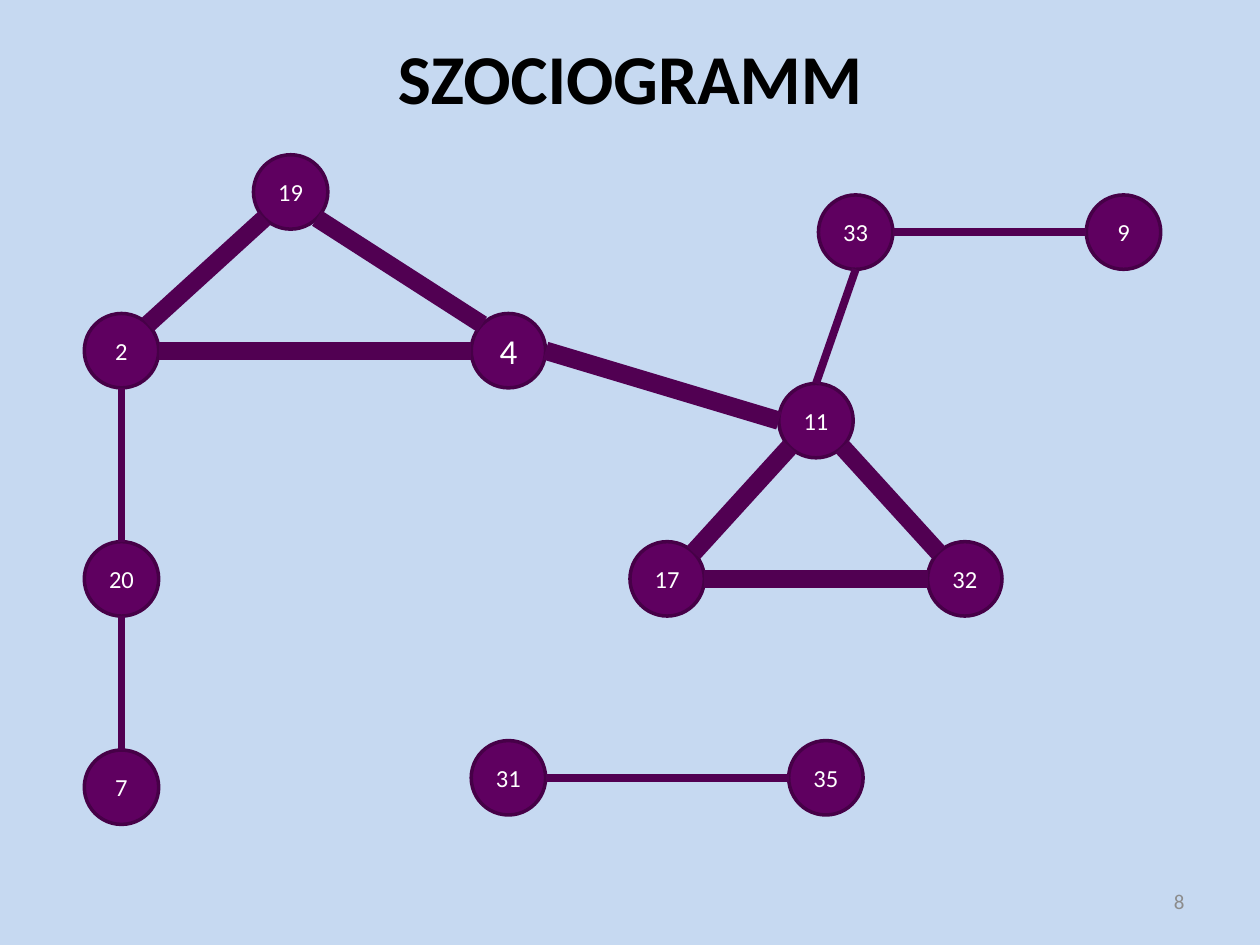
from collections import namedtuple
from math import sqrt

from lxml.etree import SubElement
from pptx import Presentation
from pptx.dml.color import RGBColor
from pptx.enum.shapes import MSO_CONNECTOR as Line, MSO_SHAPE as Shape
from pptx.enum.text import MSO_ANCHOR as Anchor, PP_ALIGN as Align
from pptx.oxml.ns import qn
from pptx.util import Cm, Pt

Box = namedtuple("Box", "left top width height")

COLORS = {
    "background": "C6D9F1",
    "title": "000000",
    "number": "8C8C8C",
    "node": "5F0060",
    "outline": "460047",
    "tie": "510052",
    "label": "FFFFFF",
}
FONT = "Calibri"
DIAMETER = 1.5
WEAK, STRONG, STRONGEST = 4.5, 10.25, 10.5

NODES = {
    "19": (5.11, 3.12),
    "4": (9.5, 6.32),
    "2": (1.7, 6.32),
    "9": (21.9, 3.93),
    "33": (16.5, 3.93),
    "11": (15.7, 7.73),
    "32": (18.7, 10.92),
    "17": (12.7, 10.92),
    "20": (1.7, 10.92),
    "7": (1.7, 15.12),
    "31": (9.5, 14.93),
    "35": (15.9, 14.93),
}

DIAGONAL = sqrt(0.5)
SITES = {
    "N": (0, -1),
    "E": (1, 0),
    "S": (0, 1),
    "W": (-1, 0),
    "NE": (DIAGONAL, -DIAGONAL),
    "SE": (DIAGONAL, DIAGONAL),
    "SW": (-DIAGONAL, DIAGONAL),
    "NW": (-DIAGONAL, -DIAGONAL),
}

TIES = [
    ("31", "E", "35", "W", WEAK),
    ("33", "E", "9", "W", WEAK),
    ("33", "S", "11", "N", WEAK),
    ("2", "S", "20", "N", WEAK),
    ("20", "S", "7", "N", WEAK),
    ("19", "SE", "4", "NW", STRONG),
    ("19", "SW", "2", "NE", STRONG),
    ("2", "E", "4", "W", STRONG),
    ("4", "E", "11", "W", STRONGEST),
    ("11", "SE", "32", "NW", STRONG),
    ("11", "SW", "17", "NE", STRONGEST),
    ("17", "E", "32", "W", STRONG),
]


def color(name):
    """Return the named colour."""
    return RGBColor.from_string(COLORS[name])


def write(shape, text, size, tint, align, bold=False):
    """Set one vertically centred paragraph in a shape."""
    frame = shape.text_frame
    frame.text = text
    frame.word_wrap = True
    frame.vertical_anchor = Anchor.MIDDLE
    para = frame.paragraphs[0]
    para.alignment = align
    font = para.runs[0].font
    font.name, font.size, font.bold = FONT, Pt(size), bold
    font.color.rgb = color(tint)


def add_text(page, box, *style, **options):
    """Place a text box that fills the given box."""
    write(page.shapes.add_textbox(*map(Cm, box)), *style, **options)


def add_node(page, box, label):
    """Draw one numbered person as a circle in the box."""
    node = page.shapes.add_shape(Shape.FLOWCHART_CONNECTOR, *map(Cm, box))
    node.shadow.inherit = False
    node.fill.solid()
    node.fill.fore_color.rgb = color("node")
    node.line.color.rgb = color("outline")
    node.line.width = Pt(2)
    frame = node.text_frame
    frame.margin_left = frame.margin_right = 0
    frame.margin_top = frame.margin_bottom = 0
    write(node, label, 20 if label == "4" else 14, "label", Align.CENTER)


def site_point(box, site):
    """Return the point on a circle's rim in the given direction."""
    across, down = SITES[site]
    return (
        Cm(box.left + box.width * (1 + across) / 2),
        Cm(box.top + box.height * (1 + down) / 2),
    )


def add_tie(page, start, end, width):
    """Draw a straight tie between two points."""
    tie = page.shapes.add_connector(Line.STRAIGHT, *start, *end)
    tie.line.color.rgb = color("tie")
    tie.line.width = Pt(width)
    SubElement(tie._element.spPr, qn("a:effectLst"))


def add_sociogram(page, box):
    """Draw all people and the ties between them inside the box."""
    circles = {
        label: Box(box.left + x, box.top + y, DIAMETER, DIAMETER)
        for label, (x, y) in NODES.items()
    }
    for label, circle in circles.items():
        add_node(page, circle, label)
    for first, leave, second, arrive, width in TIES:
        start = site_point(circles[first], leave)
        end = site_point(circles[second], arrive)
        add_tie(page, start, end, width)


def main():
    """Build and save the one-slide deck."""
    deck = Presentation()
    deck.slide_width, deck.slide_height = Cm(25.4), Cm(19.05)
    page = deck.slides.add_slide(deck.slide_layouts[6])
    page.background.fill.solid()
    page.background.fill.fore_color.rgb = color("background")
    add_text(page, Box(1.27, 0.76, 22.86, 1.55), "SZOCIOGRAMM", 40, "title",
             Align.CENTER, bold=True)
    add_text(page, Box(18.2, 17.66, 5.93, 1.01), "8", 12, "number", Align.RIGHT)
    add_sociogram(page, Box(0, 0, 25.4, 19.05))
    deck.save("out.pptx")


if __name__ == "__main__":
    main()
